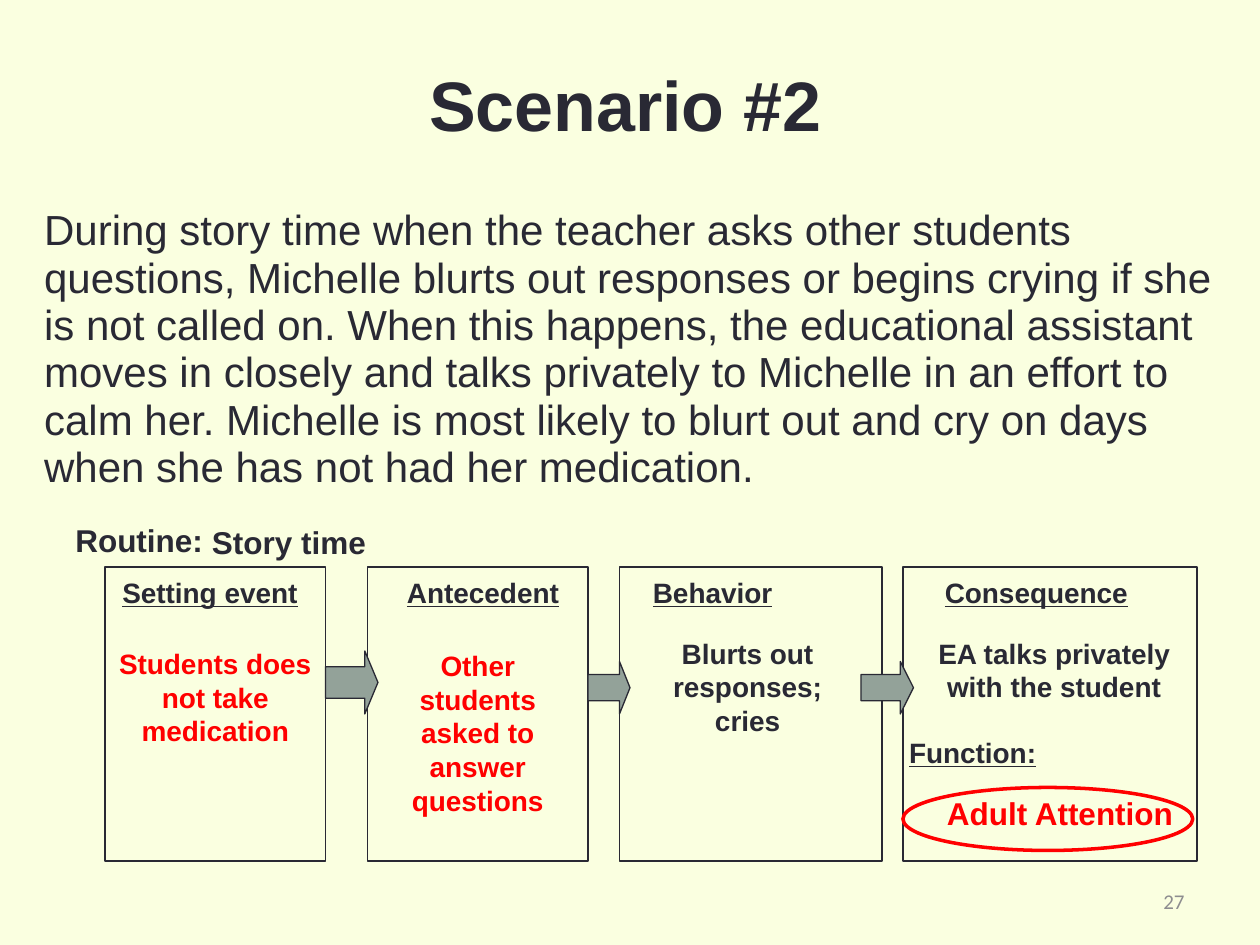
import pptx
import pptx.util
import pptx.dml.color
import pptx.enum.shapes
import pptx.enum.text
import pptx.oxml.ns
import lxml.etree

RGB = pptx.dml.color.RGBColor
CREAM = RGB(0xFA, 0xFF, 0xE0)
INK = RGB(0x29, 0x29, 0x34)
RED = RGB(0xFF, 0x00, 0x00)
SAGE = RGB(0x93, 0xA2, 0x99)
GRAY = RGB(0x8D, 0x8D, 0x8F)

KIND = pptx.enum.shapes.MSO_SHAPE
ALIGN = pptx.enum.text.PP_ALIGN
ANCHOR = pptx.enum.text.MSO_ANCHOR
FIT = pptx.enum.text.MSO_AUTO_SIZE
COLS, ROWS = 120, 90  # grid of twelfths of an inch


class Page:
    font = "Arial"

    def __init__(self, deck):
        self.wide, self.high = deck.slide_width, deck.slide_height
        self.slide = deck.slides.add_slide(deck.slide_layouts[1])
        back = self.slide.background.fill
        back.solid()
        back.fore_color.rgb = CREAM

    def spot(self, col, row, cols, rows):
        x, y = self.wide / COLS, self.high / ROWS
        return [round(n) for n in (col * x, row * y, cols * x, rows * y)]

    def run(self, para, text, size=16, color=INK, bold=True, under=False, font=None):
        run = para.add_run()
        run.text = text
        face = run.font
        face.name = font or self.font
        face.size = pptx.util.Pt(size)
        face.bold, face.underline = bold, under
        face.color.rgb = color

    def holder(self, shape, cell, text, align, gap, **style):
        shape.left, shape.top, shape.width, shape.height = self.spot(*cell)
        frame = shape.text_frame
        frame.auto_size = FIT.NONE
        frame.vertical_anchor = ANCHOR.TOP
        para = frame.paragraphs[0]
        para.alignment, para.line_spacing = align, gap
        para.space_before = pptx.util.Pt(0)
        self.run(para, text, **style)
        return para

    def title(self, cell, text):
        self.holder(self.slide.shapes.title, cell, text, ALIGN.CENTER, 0.9, size=40)

    def body(self, cell, text):
        para = self.holder(self.slide.placeholders[1], cell, text,
                           ALIGN.LEFT, 0.94, size=24, bold=False)
        props = para._p.get_or_add_pPr()
        props.set("marL", "0")
        props.set("indent", "0")
        lxml.etree.SubElement(props, pptx.oxml.ns.qn("a:buNone"))

    def text(self, cell, text, align=ALIGN.LEFT, wrap=True, **style):
        frame = self.slide.shapes.add_textbox(*self.spot(*cell)).text_frame
        frame.word_wrap = wrap
        para = frame.paragraphs[0]
        para.alignment = align
        for i, line in enumerate(text.split("\n")):
            if i:
                para.add_line_break()
            self.run(para, line, **style)
        return frame

    def shape(self, kind, cell, fill=None, line=INK, width=0.75):
        shape = self.slide.shapes.add_shape(kind, *self.spot(*cell))
        shape.shadow.inherit = False
        if fill is None:
            shape.fill.background()
        else:
            shape.fill.solid()
            shape.fill.fore_color.rgb = fill
        shape.line.color.rgb = line
        shape.line.width = pptx.util.Pt(width)
        return shape

    def arrow(self, cell):
        shape = self.shape(KIND.RIGHT_ARROW, cell, SAGE)
        shape.adjustments[0], shape.adjustments[1] = 0.5, 0.25


def main():
    deck = pptx.Presentation()
    deck.slide_width = pptx.util.Inches(10)
    deck.slide_height = pptx.util.Inches(7.5)
    page = Page(deck)

    # Title and story
    page.title((3, 6.2, 115, 9), "Scenario #2 ")
    page.body((3, 19.2, 115, 28),
              "During story time when the teacher asks other students questions, "
              "Michelle blurts out responses or begins crying if she is not called on. "
              "When this happens, the educational assistant moves in closely and talks "
              "privately to Michelle in an effort to calm her. Michelle is most likely "
              "to blurt out and cry on days when she has not had her medication.")

    # Boxes of the chain, then the arrows between them
    for col, cols in ((10, 21), (35, 21), (59, 25), (86, 28)):
        page.shape(KIND.RECTANGLE, (col, 54, cols, 28))
    for cell in ((31, 62, 5, 6), (56, 63, 4, 5), (82, 63, 5, 5)):
        page.arrow(cell)

    # Headings
    for col, cols, text, align in (
            (10.4, 19.2, "Setting event", ALIGN.CENTER),
            (37.5, 17, "Antecedent", ALIGN.CENTER),
            (61, 19, "Behavior", ALIGN.LEFT),
            (88.8, 19.8, "Consequence", ALIGN.LEFT)):
        page.text((col, 54.2, cols, 4.4), text, align, wrap=False, under=True)

    # Answers
    for cell, text, color in (
            ((10, 61, 21, 11), "Students does not take medication", RED),
            ((37, 61.2, 17, 17.4), "Other students asked to answer questions", RED),
            ((59.2, 60, 24, 11), "Blurts out responses;\ncries", INK)):
        page.text(cell, text, ALIGN.CENTER, color=color)
    frame = page.text((85.4, 60, 30, 14.2), "EA talks privately with the student",
                      ALIGN.CENTER)
    para = frame.add_paragraph()
    para.space_before = pptx.util.Pt(18.4)
    page.run(para, "Function:", under=True)

    # Routine
    page.text((6, 49, 41, 4.8), "Routine:", size=18)
    page.text((19, 49.2, 40, 4.8), "Story time", size=18)

    # Function of the behavior
    page.shape(KIND.OVAL, (86, 75, 27.6, 6), line=RED, width=2)
    page.text((89, 75, 24.6, 4.8), "Adult Attention", size=18, color=RED)

    # Page number
    foot = page.text((86, 83.4, 28, 4.8), "27", ALIGN.RIGHT, size=12,
                     color=GRAY, bold=False, font="Calibri")
    foot.vertical_anchor = ANCHOR.MIDDLE

    deck.save("out.pptx")


if __name__ == "__main__":
    main()
